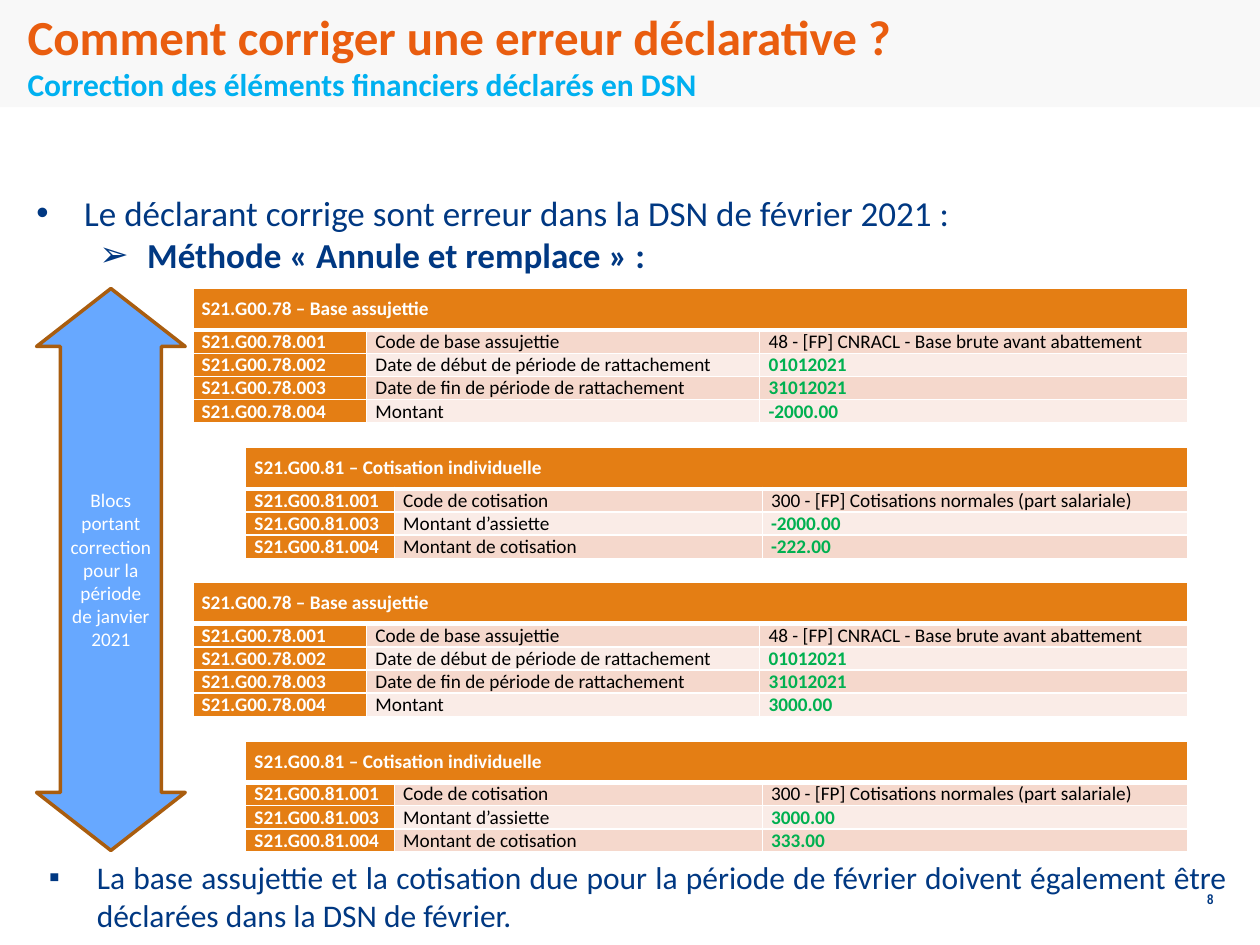
import dataclasses
import typing

import lxml.etree
import pptx
import pptx.dml.color
import pptx.enum.shapes
import pptx.enum.text
import pptx.oxml.ns
import pptx.util

Inches = pptx.util.Inches
Pt = pptx.util.Pt
ALIGN = pptx.enum.text.PP_ALIGN
MIDDLE = pptx.enum.text.MSO_ANCHOR.MIDDLE
SHAPE = pptx.enum.shapes.MSO_SHAPE
qn = pptx.oxml.ns.qn

COLORS = {
    "banner": "F8F8F8",
    "title": "E95D0F",
    "subtitle": "00B0F0",
    "body": "003882",
    "header": "E47E14",
    "odd_row": "F5D8CC",
    "even_row": "FAECE7",
    "label": "000000",
    "corrected": "00B050",
    "white": "FFFFFF",
    "arrow": "67A8FF",
    "arrow_line": "A95D0F",
}
HEADER_HEIGHT = 0.33
ROW_HEIGHT = 0.18


@dataclasses.dataclass
class Field:
    code: str
    label: str
    value: str


@dataclasses.dataclass
class Block:
    left: float
    top: float
    widths: tuple[float, float, float]
    heading: str
    fields: list[Field]


@dataclasses.dataclass
class Bullet:
    text: str
    mark: str
    size: float
    level: int = 1
    indent: float = 0.38
    bold: bool = False


def rgb(name: str) -> pptx.dml.color.RGBColor:
    return pptx.dml.color.RGBColor.from_string(COLORS[name])


def add_run(paragraph, text: str, size: float, color: str,
            bold: bool = False, font: str = "Calibri") -> None:
    run = paragraph.add_run()
    run.text = text
    run.font.name = font
    run.font.size = Pt(size)
    run.font.bold = bold
    run.font.color.rgb = rgb(color)


def add_text_frame(slide, left: float, top: float, width: float, height: float):
    box = slide.shapes.add_textbox(Inches(left), Inches(top), Inches(width), Inches(height))
    box.text_frame.word_wrap = True
    return box.text_frame


def add_bullets(slide, left: float, top: float, width: float, height: float,
                bullets: list[Bullet]) -> None:
    frame = add_text_frame(slide, left, top, width, height)
    frame.auto_size = pptx.enum.text.MSO_AUTO_SIZE.SHAPE_TO_FIT_TEXT
    for index, bullet in enumerate(bullets):
        paragraph = frame.add_paragraph() if index else frame.paragraphs[0]
        paragraph.alignment = ALIGN.JUSTIFY
        paragraph.level = bullet.level
        properties = paragraph._p.get_or_add_pPr()
        properties.set("marL", str(Inches(bullet.indent)))
        properties.set("indent", str(-Inches(0.38)))
        lxml.etree.SubElement(properties, qn("a:buFont"), typeface="Arial")
        lxml.etree.SubElement(properties, qn("a:buChar"), char=bullet.mark)
        add_run(paragraph, bullet.text, bullet.size, "body", bullet.bold)


def add_shape(slide, kind, left: float, top: float, width: float, height: float, fill: str):
    shape = slide.shapes.add_shape(
        kind, Inches(left), Inches(top), Inches(width), Inches(height))
    shape.shadow.inherit = False
    shape.fill.solid()
    shape.fill.fore_color.rgb = rgb(fill)
    shape.line.fill.background()
    return shape


def set_arrow_proportions(arrow, shaft: float, head: float) -> None:
    """Write both guides as XML, since python-pptx gives them the same name here."""
    guides = arrow._element.spPr.find(qn("a:prstGeom")).find(qn("a:avLst"))
    for guide in list(guides):
        guides.remove(guide)
    for name, share in (("adj1", shaft), ("adj2", head)):
        lxml.etree.SubElement(guides, qn("a:gd"), name=name, fmla=f"val {round(share * 100000)}")


def style_cell(cell, fill: str, top_line: float = 1, bottom_line: float = 1) -> None:
    cell.margin_left = cell.margin_right = Inches(0.07)
    cell.margin_top = cell.margin_bottom = 0
    cell.vertical_anchor = MIDDLE
    properties = cell._tc.get_or_add_tcPr()
    for side, points in (("L", 1), ("R", 1), ("T", top_line), ("B", bottom_line)):
        line = lxml.etree.SubElement(properties, qn(f"a:ln{side}"), w=str(Pt(points)))
        solid = lxml.etree.SubElement(line, qn("a:solidFill"))
        lxml.etree.SubElement(solid, qn("a:srgbClr"), val=COLORS["white"])
    cell.fill.solid()
    cell.fill.fore_color.rgb = rgb(fill)


def write_cell(cell, text: str, color: str, bold: bool,
               alignment: typing.Any = ALIGN.JUSTIFY) -> None:
    paragraph = cell.text_frame.paragraphs[0]
    paragraph.alignment = alignment
    add_run(paragraph, text, 11, color, bold)


def add_block(slide, block: Block) -> None:
    height = HEADER_HEIGHT + ROW_HEIGHT * len(block.fields)
    table = slide.shapes.add_table(
        len(block.fields) + 1, len(block.widths), Inches(block.left), Inches(block.top),
        Inches(sum(block.widths)), Inches(height)).table
    for column, width in zip(table.columns, block.widths):
        column.width = Inches(width)
    table.rows[0].height = Inches(HEADER_HEIGHT)
    for cell in table.rows[0].cells:
        style_cell(cell, "header", bottom_line=3)
    table.cell(0, 0).merge(table.cell(0, len(block.widths) - 1))
    write_cell(table.cell(0, 0), block.heading, "white", True)

    for number, field in enumerate(block.fields, start=1):
        first = number == 1
        table.rows[number].height = Inches(ROW_HEIGHT)
        band = "odd_row" if number % 2 else "even_row"
        code, label, value = table.rows[number].cells
        for cell, fill in ((code, "header"), (label, band), (value, band)):
            style_cell(cell, fill, top_line=3 if first else 1)
        write_cell(code, field.code, "white", True)
        write_cell(label, field.label, "label", False)
        write_cell(value, field.value, "label" if first else "corrected", not first,
                   ALIGN.LEFT if first else ALIGN.JUSTIFY)


def base_block(top: float, amount: str) -> Block:
    return Block(1.53, top, (1.38, 3.12, 3.4), "S21.G00.78 – Base assujettie", [
        Field("S21.G00.78.001", "Code de base assujettie",
              "48 - [FP] CNRACL - Base brute avant abattement"),
        Field("S21.G00.78.002", "Date de début de période de rattachement", "01012021"),
        Field("S21.G00.78.003", "Date de fin de période de rattachement", "31012021"),
        Field("S21.G00.78.004", "Montant", amount),
    ])


def contribution_block(top: float, base: str, amount: str) -> Block:
    return Block(1.95, top, (1.18, 2.92, 3.38), "S21.G00.81 – Cotisation individuelle", [
        Field("S21.G00.81.001", "Code de cotisation",
              "300 - [FP] Cotisations normales (part salariale)"),
        Field("S21.G00.81.003", "Montant d’assiette", base),
        Field("S21.G00.81.004", "Montant de cotisation", amount),
    ])


def main() -> None:
    presentation = pptx.Presentation()
    presentation.slide_width, presentation.slide_height = Inches(10), Inches(7.5)
    slide = presentation.slides.add_slide(presentation.slide_layouts[6])

    add_shape(slide, SHAPE.RECTANGLE, 0, 0, 10, 0.85, "banner")
    page_number = add_text_frame(slide, 7.4, 7.02, 2.33, 0.4).paragraphs[0]
    page_number.alignment = ALIGN.RIGHT
    add_run(page_number, "8", 8, "body", True, "Arial Narrow")
    title = add_text_frame(slide, 0.12, 0, 9.48, 0.84).paragraphs[0]
    add_run(title, "Comment corriger une erreur déclarative ?", 28, "title", True)
    title.add_line_break()
    add_run(title, "Correction des éléments financiers déclarés en DSN", 18, "subtitle", True)
    add_bullets(slide, 0.19, 1.47, 9.55, 0.77, [
        Bullet("Le déclarant corrige sont erreur dans la DSN de février 2021 :", "•", 20),
        Bullet("Méthode « Annule et remplace\u00a0» :", "➢", 20, 2, 0.88, True),
    ])
    for block in (base_block(2.29, "-2000.00"),
                  contribution_block(3.55, "-2000.00", "-222.00"),
                  base_block(4.62, "3000.00"),
                  contribution_block(5.88, "3000.00", "333.00")):
        add_block(slide, block)

    period = add_shape(slide, SHAPE.UP_DOWN_ARROW, 0.29, 2.29, 1.18, 4.46, "arrow")
    set_arrow_proportions(period, shaft=0.68, head=0.39)
    period.line.color.rgb = rgb("arrow_line")
    period.line.width = Pt(2)
    frame = period.text_frame
    frame.word_wrap = True
    frame.vertical_anchor = MIDDLE
    frame.margin_left = frame.margin_right = Inches(0.08)
    frame.margin_top = frame.margin_bottom = Inches(0.04)
    frame.paragraphs[0].alignment = ALIGN.CENTER
    add_run(frame.paragraphs[0],
            "Blocs portant correction pour la période de janvier 2021", 11, "white")
    add_bullets(slide, 0.29, 6.76, 9.55, 0.71, [
        Bullet("La base assujettie et la cotisation due pour la période de février doivent "
               "également être déclarées dans la DSN de février.", "▪", 18),
    ])
    presentation.save("out.pptx")


if __name__ == "__main__":
    main()
